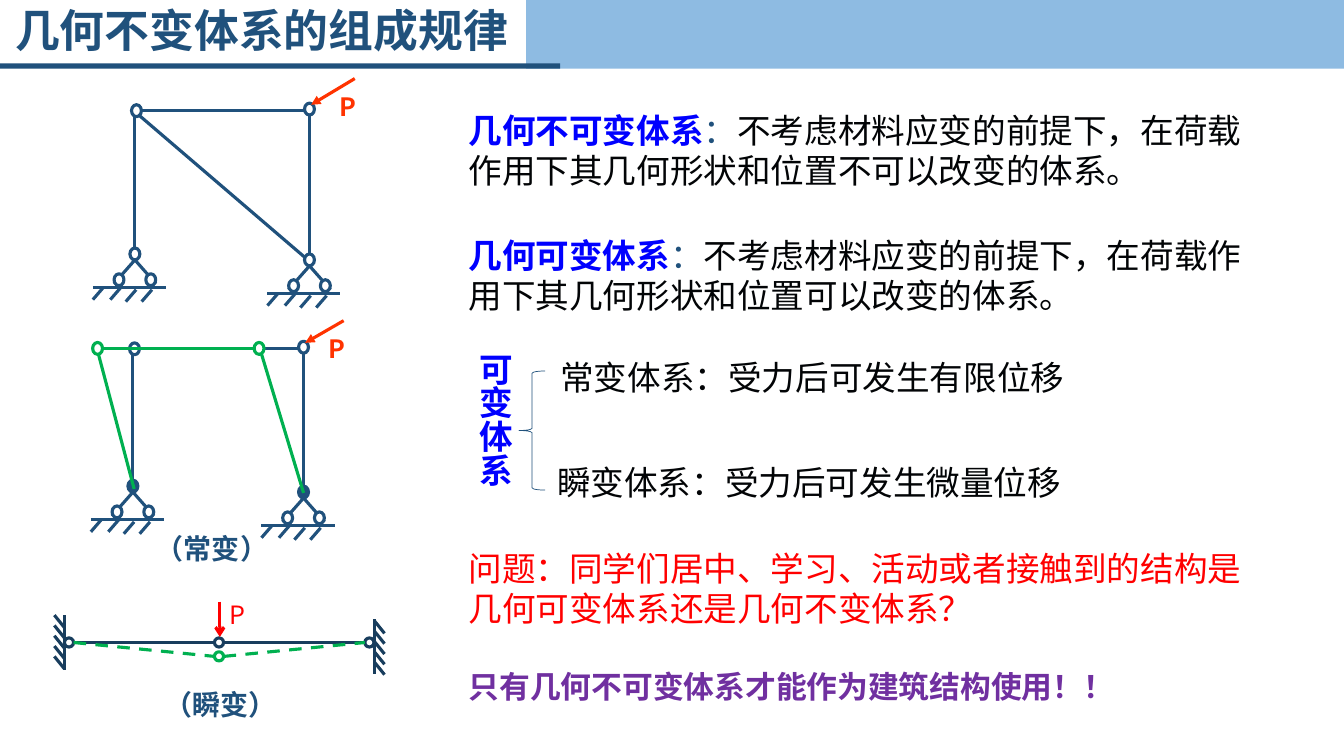
from dataclasses import dataclass
from lxml.etree import SubElement
from pptx import Presentation
from pptx.dml.color import RGBColor
from pptx.enum.dml import MSO_LINE
from pptx.enum.shapes import MSO_CONNECTOR, MSO_SHAPE
from pptx.enum.text import MSO_ANCHOR, MSO_AUTO_SIZE, PP_ALIGN
from pptx.oxml.ns import qn
from pptx.util import Cm, Pt


@dataclass(frozen=True)
class Theme:
    font: str = "Noto Sans CJK SC"
    navy: str = "20517C"
    dark_navy: str = "183D5D"
    sky: str = "8EBBE2"
    white: str = "FFFFFF"
    ink: str = "020406"
    blue: str = "0000FF"
    green: str = "00B050"
    orange: str = "FF3300"
    red: str = "FF0000"
    purple: str = "7030A0"
    title_size: int = 32
    body_size: int = 24
    closing_size: int = 22
    caption_size: int = 20
    load_size: int = 18
    stroke: float = 2.25
    thin: float = 0.5


class Drawing:
    """Adds styled elements to the current slide; lengths are in cm."""

    def __init__(self, slide, theme):
        self.slide, self.theme = slide, theme

    def shape(self, kind, left, top, width, height, fill=None, line=None, weight=None):
        item = self.slide.shapes.add_shape(kind, Cm(left), Cm(top), Cm(width), Cm(height))
        item.shadow.inherit = False
        for paint, color in ((item.fill, fill), (item.line.fill, line)):
            if color:
                paint.solid()
                paint.fore_color.rgb = RGBColor.from_string(color)
            else:
                paint.background()
        if line:
            item.line.width = Pt(weight or self.theme.stroke)

    def pin(self, x, y, fill=None, line=None, width=0.25, height=0.3):
        self.shape(MSO_SHAPE.OVAL, x - width / 2, y - height / 2, width, height,
                   fill, line or self.theme.navy)

    def line(self, x1, y1, x2, y2, color=None, dash=None, head=None):
        rod = self.slide.shapes.add_connector(
            MSO_CONNECTOR.STRAIGHT, Cm(x1), Cm(y1), Cm(x2), Cm(y2))
        rod.line.color.rgb = RGBColor.from_string(color or self.theme.navy)
        rod.line.width = Pt(self.theme.stroke)
        if dash:
            rod.line.dash_style = dash
        if head:
            SubElement(rod.line._get_or_add_ln(), qn("a:tailEnd"), type=head)
        SubElement(rod.element.spPr, qn("a:effectLst"))

    def text(self, left, top, width, height, runs, size, wrap=True, grow=True,
             anchor=MSO_ANCHOR.TOP, align=PP_ALIGN.LEFT, spacing=None, vertical=False):
        box = self.slide.shapes.add_textbox(Cm(left), Cm(top), Cm(width), Cm(height))
        layout = {
            "word_wrap": wrap,
            "auto_size": MSO_AUTO_SIZE.SHAPE_TO_FIT_TEXT if grow else MSO_AUTO_SIZE.NONE,
            "vertical_anchor": anchor,
        }
        for name, value in layout.items():
            setattr(box.text_frame, name, value)
        if vertical:
            box.element.txBody.bodyPr.set("vert", "eaVert")
        paragraph = box.text_frame.paragraphs[0]
        paragraph.alignment = align
        if spacing:
            paragraph.line_spacing = spacing
        for words, color, bold in runs:
            run = paragraph.add_run()
            run.text = words
            for name, value in {"size": Pt(size), "bold": bold, "name": self.theme.font}.items():
                setattr(run.font, name, value)
            run.font.color.rgb = RGBColor.from_string(color)
            SubElement(run.font._element, qn("a:ea"), typeface=self.theme.font)

    def support(self, x, y, pin_fill):
        """Hinged support with its apex at x, y."""
        for side in (-0.53, 0.53):
            self.line(x, y, x + side, y + 0.6)
        self.line(x - 1.06, y + 0.7, x + 0.78, y + 0.7)
        for dx, dy in ((-0.8, 0.7), (-0.36, 0.7), (0.03, 0.75), (0.43, 0.75)):
            self.line(x + dx, y + dy, x + dx - 0.26, y + dy + 0.3)
        for side in (-0.4, 0.4):
            self.pin(x + side, y + 0.5, self.theme.white)
        self.pin(x, y - 0.15, pin_fill)

    def frame(self, left, right, beam, left_foot, right_foot, load, pin_fill, braced=False):
        """Two posts and a beam, loaded at the top right by an arrow from load."""
        for post, foot in ((left, left_foot), (right, right_foot)):
            self.line(post, beam + 0.1, post, foot - 0.15)
        self.line(left, beam, right - 0.13, beam)
        if braced:
            self.line(left + 0.03, beam + 0.05, right - 0.1, right_foot - 0.2)
        for post, foot in ((left, left_foot), (right, right_foot)):
            self.support(post, foot, pin_fill)
        self.pin(left + 0.04, beam, self.theme.white)
        self.pin(right, beam - 0.04, self.theme.white)
        x, y = load
        self.line(x, y, right + 0.04, beam - 0.15, self.theme.orange, head="triangle")
        self.text(x - 0.75, y + 0.1, 1.18, 1.2, [("P", self.theme.orange, True)],
                  self.theme.load_size, anchor=MSO_ANCHOR.MIDDLE, align=PP_ALIGN.CENTER)

    def wall(self, face, hatch_left, top, hatch_top):
        color = self.theme.dark_navy
        self.line(face, top, face, top + 1.38, color)
        for step in range(5):
            y = hatch_top + 0.26 * step
            self.line(hatch_left, y, hatch_left + 0.25, y + 0.31, color)


def main():
    deck = Presentation()
    deck.slide_width, deck.slide_height = Cm(33.87), Cm(19.05)
    theme = Theme()
    draw = Drawing(deck.slides.add_slide(deck.slide_layouts[6]), theme)

    # Title band
    draw.shape(MSO_SHAPE.RECTANGLE, 13.26, 0, 20.61, 1.73, theme.sky)
    draw.shape(MSO_SHAPE.RECTANGLE, 0, 1.6, 14.12, 0.13, theme.navy)
    draw.text(0.13, 0.03, 17.12, 1.6, [("几何不变体系的组成规律", theme.navy, True)],
              theme.title_size, grow=False, anchor=MSO_ANCHOR.MIDDLE, spacing=0.9)

    # Braced frame that keeps its shape
    draw.frame(3.4, 7.8, 2.79, 6.55, 6.7, (8.94, 1.98), theme.white, braced=True)

    # Unbraced frame and its swayed position
    draw.frame(3.35, 7.65, 8.79, 12.4, 12.55, (8.66, 8.08), theme.navy)
    for sway in ((6.55, 8.79, 7.65, 12.42), (2.44, 8.77, 3.38, 12.32), (2.5, 8.79, 6.53, 8.79)):
        draw.line(*sway, color=theme.green)
    for x in (2.46, 6.53):
        draw.pin(x, 8.78, theme.white, theme.green)

    # Hinged beam between two walls and its sagging position
    draw.wall(1.63, 1.37, 15.5, 15.5)
    draw.wall(9.44, 9.44, 15.6, 15.65)
    axis, sag, radius = 16.19, 16.54, 0.115
    hinges = (1.74, 5.52, 9.31)
    for x in hinges:
        draw.pin(x, axis, None, theme.dark_navy, 2 * radius, 2 * radius)
    draw.pin(hinges[1], sag, None, theme.green, 2 * radius, 2 * radius)
    for start, end, y1, y2 in zip(hinges, hinges[1:], (axis, sag), (sag, axis)):
        draw.line(start + radius, axis, end - radius, axis, theme.dark_navy)
        draw.line(start + radius, y1, end - radius, y2, theme.green, dash=MSO_LINE.DASH)
    draw.line(5.54, 15.16, 5.54, 16.05, theme.red, head="arrow")
    draw.text(5.54, 14.99, 0.84, 1.02, [("P", theme.red, False)], theme.load_size, wrap=False)

    # Captions under the diagrams
    for left, top, caption in ((3.68, 13.28, "（常变）"), (3.89, 17.2, "（瞬变）")):
        draw.text(left, top, 3.35, 1.12, [(caption, theme.navy, True)],
                  theme.caption_size, wrap=False)

    # Definitions
    definitions = (
        (2.64, 20.8, "几何不可变体系",
         "不考虑材料应变的前提下，在荷载作用下其几何形状和位置不可以改变的体系。"),
        (5.79, 20.5, "几何可变体系",
         "不考虑材料应变的前提下，在荷载作用下其几何形状和位置可以改变的体系。"),
    )
    for top, width, term, meaning in definitions:
        draw.text(11.56, top, width, 2.31,
                  [(term, theme.blue, True), ("：", theme.navy, False),
                   (meaning, theme.ink, False)], theme.body_size)

    # Kinds of changeable system
    draw.text(11.56, 8.64, 1.55, 4.62, [("可变体系", theme.blue, True)],
              theme.body_size, wrap=False, vertical=True)
    draw.shape(MSO_SHAPE.LEFT_BRACE, 13.08, 9.35, 0.66, 3, None, theme.navy, theme.thin)
    for left, top, kind in ((13.87, 8.86, "常变体系：受力后可发生有限位移"),
                            (13.79, 11.51, "瞬变体系：受力后可发生微量位移")):
        draw.text(left, top, 13.34, 1.27, [(kind, theme.ink, False)],
                  theme.body_size, wrap=False)

    # Question and answer
    draw.text(11.56, 13.67, 20.8, 2.31,
              [("问题：同学们居中、学习、活动或者接触到的结构是几何可变体系还是几何不变体系？",
                theme.red, False)], theme.body_size)
    draw.text(11.56, 16.69, 19.2, 1.19,
              [("只有几何不可变体系才能作为建筑结构使用！！", theme.purple, True)],
              theme.closing_size)

    deck.save("out.pptx")


if __name__ == "__main__":
    main()
